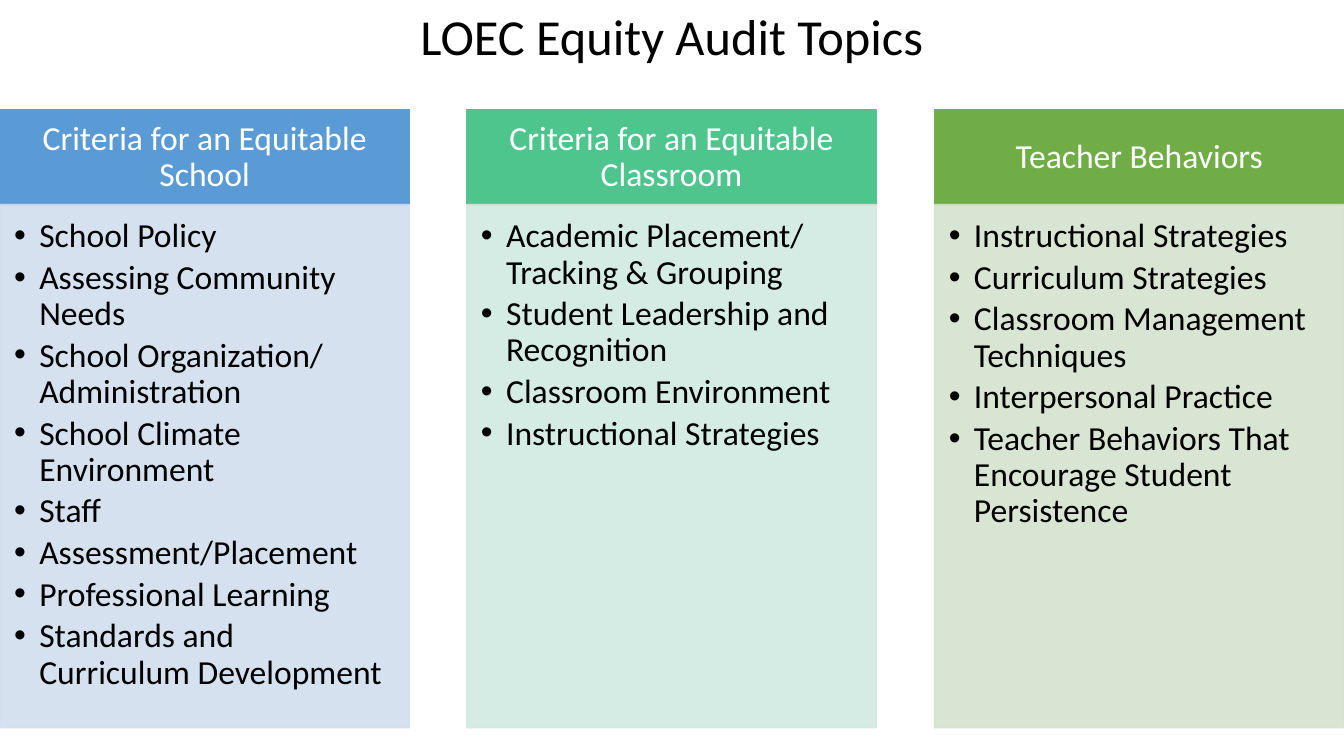
"""Build the equity audit topics slide with three topic columns."""
from dataclasses import dataclass

from lxml import etree
from pptx import Presentation
from pptx import util as u
from pptx.dml.color import RGBColor
from pptx.enum import shapes, text
from pptx.oxml import ns

PX = 9144
SLIDE_W, SLIDE_H = 1333, 750
COLUMN_W = 406
HEADING_TOP, HEADING_H = 109, 95
TOPICS_TOP, TOPICS_H = 203, 519
TITLE_H = 71
BULLET_INDENT = 25


@dataclass(frozen=True)
class Column:
    """One audit area: its heading, its colours and its topics."""
    heading: str
    strong: str
    pale: str
    topics: tuple[str, ...]


COLUMNS = (
    Column("Criteria for an Equitable School", "5B9BD5", "D2DEEF", (
        "School Policy",
        "Assessing Community Needs",
        "School Organization/ Administration",
        "School Climate Environment",
        "Staff",
        "Assessment/Placement",
        "Professional Learning",
        "Standards and Curriculum Development",
    )),
    Column("Criteria for an Equitable Classroom", "4DC58D", "D0EAE1", (
        "Academic Placement/ Tracking & Grouping",
        "Student Leadership and Recognition",
        "Classroom Environment",
        "Instructional Strategies",
    )),
    Column("Teacher Behaviors", "70AD47", "D5E3CF", (
        "Instructional Strategies",
        "Curriculum Strategies",
        "Classroom Management Techniques",
        "Interpersonal Practice",
        "Teacher Behaviors That Encourage Student Persistence",
    )),
)


def px(length: int) -> u.Emu:
    """Turn whole px into EMU."""
    return u.Emu(length * PX)


def colour(code: str) -> RGBColor:
    """Turn a hex string into a colour."""
    return RGBColor.from_string(code)


def add_panel(slide, left: int, top: int, height: int, fill: str, opacity: int = 100):
    """Draw one filled rectangle of column width."""
    panel = slide.shapes.add_shape(
        shapes.MSO_SHAPE.RECTANGLE, px(left), px(top), px(COLUMN_W), px(height))
    panel.shadow.inherit = False
    panel.fill.solid()
    panel.fill.fore_color.rgb = colour(fill)
    panel.line.color.rgb = colour(fill)
    panel.line.width = u.Pt(1)
    if opacity < 100:
        for tone in panel.element.spPr.iter(ns.qn("a:srgbClr")):
            etree.SubElement(tone, ns.qn("a:alpha"), val=str(opacity * 1000))
    return panel


def add_bullet(paragraph) -> None:
    """Give a paragraph a hanging bullet."""
    properties = paragraph._p.get_or_add_pPr()
    properties.set("marL", str(px(BULLET_INDENT)))
    properties.set("indent", str(-px(BULLET_INDENT)))
    etree.SubElement(properties, ns.qn("a:buFont"), typeface="Arial")
    etree.SubElement(properties, ns.qn("a:buChar"), char="•")


def write(shape, *lines: str, size: int = 24, ink: str = "000000",
          align=text.PP_ALIGN.CENTER, anchor=text.MSO_ANCHOR.MIDDLE,
          insets: tuple[int, int, int, int] = (19, 11, 19, 11),
          spacing: float = 0.9, after: float = 0, bullets: bool = False) -> None:
    """Fill a shape with formatted paragraphs."""
    frame = shape.text_frame
    frame.word_wrap = True
    frame.vertical_anchor = anchor
    (frame.margin_left, frame.margin_top,
     frame.margin_right, frame.margin_bottom) = map(px, insets)
    for index, line in enumerate(lines):
        paragraph = frame.add_paragraph() if index else frame.paragraphs[0]
        paragraph.alignment = align
        paragraph.line_spacing = spacing
        paragraph.space_after = u.Pt(after)
        if bullets:
            add_bullet(paragraph)
        run = paragraph.add_run()
        run.text = line
        run.font.name = "Calibri"
        run.font.size = u.Pt(size)
        run.font.color.rgb = colour(ink)


def add_column(slide, left: int, column: Column) -> None:
    """Draw a heading panel with its topic panel below."""
    heading = add_panel(slide, left, HEADING_TOP, HEADING_H, column.strong)
    write(heading, column.heading, ink="FFFFFF")
    topics = add_panel(slide, left, TOPICS_TOP, TOPICS_H, column.pale, opacity=90)
    write(topics, *column.topics, align=text.PP_ALIGN.LEFT, anchor=text.MSO_ANCHOR.TOP,
          insets=(14, 14, 19, 21), after=3.8, bullets=True)


def main() -> None:
    """Build and save the slide."""
    deck = Presentation()
    deck.slide_width, deck.slide_height = px(SLIDE_W), px(SLIDE_H)
    slide = deck.slides.add_slide(deck.slide_layouts[6])
    for index, column in enumerate(COLUMNS):
        left = index * (SLIDE_W - COLUMN_W) // (len(COLUMNS) - 1)
        add_column(slide, left, column)
    title = slide.shapes.add_textbox(0, 0, px(SLIDE_W), px(TITLE_H))
    write(title, "LOEC Equity Audit Topics", size=36, spacing=1.0,
          anchor=text.MSO_ANCHOR.TOP, insets=(10, 5, 10, 5))
    deck.save("out.pptx")


if __name__ == "__main__":
    main()
